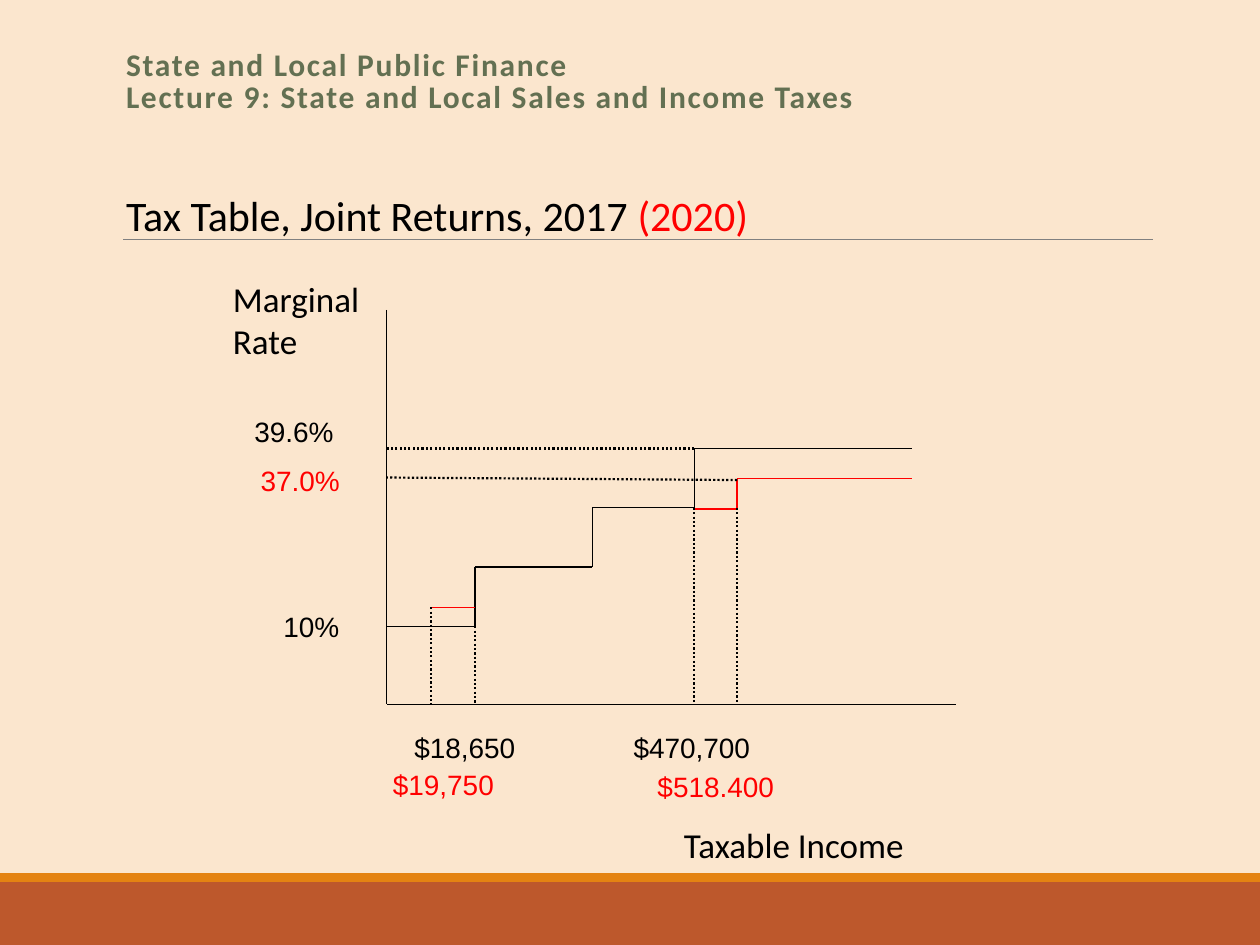
import itertools

import pptx
import pptx.dml.color
import pptx.enum.dml
import pptx.enum.shapes
import pptx.enum.text
import pptx.util
from pptx.util import Inches


class Theme:
    back, brick, amber = "FBE6CE", "BD582C", "E48312"
    green, gray, black, red = "637052", "808080", "000000", "FF0000"
    sans, plain = "Calibri", "Arial"
    head, lead, axis, label = 18, 24, 20, 16
    hair, thin, dots = 0.5, 0.75, 1.25


def color(code):
    return pptx.dml.color.RGBColor.from_string(code)


def write(para, text, size=Theme.label, font=Theme.plain, ink=Theme.black,
          bold=False, track=None):
    """Add text to a paragraph; track is letter spacing in points."""
    for num, line in enumerate(text.split("\n")):
        if num:
            para.add_line_break()
        run = para.add_run()
        run.text = line
        run.font.size = pptx.util.Pt(size)
        run.font.name = font
        run.font.bold = bold
        run.font.color.rgb = color(ink)
        if track:
            run.font._element.set("spc", str(track * 100))


class Maker:
    def __init__(self, theme):
        self.theme = theme
        self.deck = pptx.Presentation()
        self.deck.slide_width, self.deck.slide_height = Inches(10), Inches(7.5)
        self.slide = self.deck.slides.add_slide(self.deck.slide_layouts[1])
        fill = self.slide.background.fill
        fill.solid()
        fill.fore_color.rgb = color(theme.back)

    def holder(self, index, left, top, width, height):
        """Place a template placeholder and return its first paragraph."""
        shape = self.slide.placeholders[index]
        shape.left, shape.top = Inches(left), Inches(top)
        shape.width, shape.height = Inches(width), Inches(height)
        shape.text_frame.auto_size = pptx.enum.text.MSO_AUTO_SIZE.NONE
        para = shape.text_frame.paragraphs[0]
        para.alignment = pptx.enum.text.PP_ALIGN.LEFT
        return para

    def title(self, text):
        para = self.holder(0, 0.9, 0.33, 8.25, 0.65)
        para.line_spacing = 0.85
        write(para, text, size=self.theme.head, font=self.theme.sans,
              ink=self.theme.green, bold=True, track=1)

    def body(self, *parts):
        para = self.holder(1, 1, 1.5, 8.25, 4.4)
        frame = self.slide.placeholders[1].text_frame
        frame.margin_left = frame.margin_right = 0
        para.line_spacing = 0.9
        para.space_before = pptx.util.Pt(6.8)
        para.space_after = pptx.util.Pt(1.1)
        props = para._p.get_or_add_pPr()
        props.set("marL", str(Inches(0.06)))
        props.set("indent", str(Inches(-0.06)))
        props.append(pptx.oxml.parse_xml(
            f"<a:buNone {pptx.oxml.ns.nsdecls('a')}/>"))
        for text, ink in parts:
            write(para, text, size=self.theme.lead, font=self.theme.sans, ink=ink)

    def band(self, top, height, ink):
        shape = self.slide.shapes.add_shape(
            pptx.enum.shapes.MSO_SHAPE.RECTANGLE,
            0, Inches(top), self.deck.slide_width, Inches(height))
        shape.shadow.inherit = False
        shape.fill.solid()
        shape.fill.fore_color.rgb = color(ink)
        shape.line.fill.background()

    def label(self, text, left, top, width, height=0.63, **style):
        box = self.slide.shapes.add_textbox(
            Inches(left), Inches(top), Inches(width), Inches(height))
        box.text_frame.word_wrap = True
        write(box.text_frame.paragraphs[0], text, **style)

    def line(self, start, end, ink=Theme.black, width=Theme.thin, dots=False):
        link = self.slide.shapes.add_connector(
            pptx.enum.shapes.MSO_CONNECTOR.STRAIGHT,
            *(Inches(value) for value in (*start, *end)))
        link.line.color.rgb = color(ink)
        link.line.width = pptx.util.Pt(self.theme.dots if dots else width)
        if dots:
            link.line.dash_style = pptx.enum.dml.MSO_LINE.ROUND_DOT
        link._element.spPr.append(pptx.oxml.parse_xml(
            f"<a:effectLst {pptx.oxml.ns.nsdecls('a')}/>"))

    def trace(self, *points, **style):
        """Join each point to the next."""
        for start, end in itertools.pairwise(points):
            self.line(start, end, **style)


def main():
    theme = Theme()
    page = Maker(theme)
    page.band(7, 0.5, theme.brick)
    page.band(6.93, 0.07, theme.amber)
    page.line((0.98, 1.9), (9.15, 1.9), ink=theme.gray, width=theme.hair)
    page.title("State and Local Public Finance\n"
               "Lecture 9: State and Local Sales and Income Taxes")
    page.body(("Tax Table, Joint Returns, 2017 ", theme.black),
              ("(2020)", theme.red))

    # Axes
    left, base, right = 3.07, 5.59, 7.24
    page.trace((left, 2.46), (left, base), (7.59, base))
    names = dict(size=theme.axis, font=theme.sans)
    page.label("Taxable Income", 5.33, 6.49, 2.08, **names)
    page.label("Marginal Rate", 1.75, 2.15, 1.32, 0.94, **names)

    # Income brackets across, tax rates up
    low_new, low, mid, high, high_new = 3.42, 3.77, 4.7, 5.51, 5.85
    ten, twelve, third, fourth, peak_new, peak = 4.97, 4.82, 4.5, 4.03, 3.8, 3.56
    page.trace((left, ten), (low, ten), (low, third), (mid, third),
               (mid, fourth), (high, fourth), (high, peak), (right, peak))
    page.trace((high, fourth + 0.01), (high_new, fourth + 0.01),
               (high_new, peak_new), (right, peak_new), ink=theme.red)
    page.line((low_new, twelve), (low, twelve), ink=theme.red)

    # Dotted guides to the axes
    for across, up in ((low, ten), (high, fourth),
                       (low_new, twelve), (high_new, fourth)):
        page.line((across, up), (across, base), dots=True)
    page.line((high, peak), (left, peak), dots=True)
    page.line((high_new, peak_new + 0.01), (left, peak_new - 0.01), dots=True)

    for text, across, down, width, ink in (
            ("10%", 2.15, 4.79, 0.93, theme.black),
            ("39.6%", 1.92, 3.24, 1.04, theme.black),
            ("37.0%", 1.97, 3.63, 1.04, theme.red),
            ("$18,650", 3.19, 5.75, 1.27, theme.black),
            ("$470,700", 4.93, 5.75, 1.27, theme.black),
            ("$19,750", 3.02, 6.04, 1.27, theme.red),
            ("$518.400", 5.12, 6.06, 1.27, theme.red)):
        page.label(text, across, down, width, ink=ink)

    page.deck.save("out.pptx")


if __name__ == "__main__":
    main()
